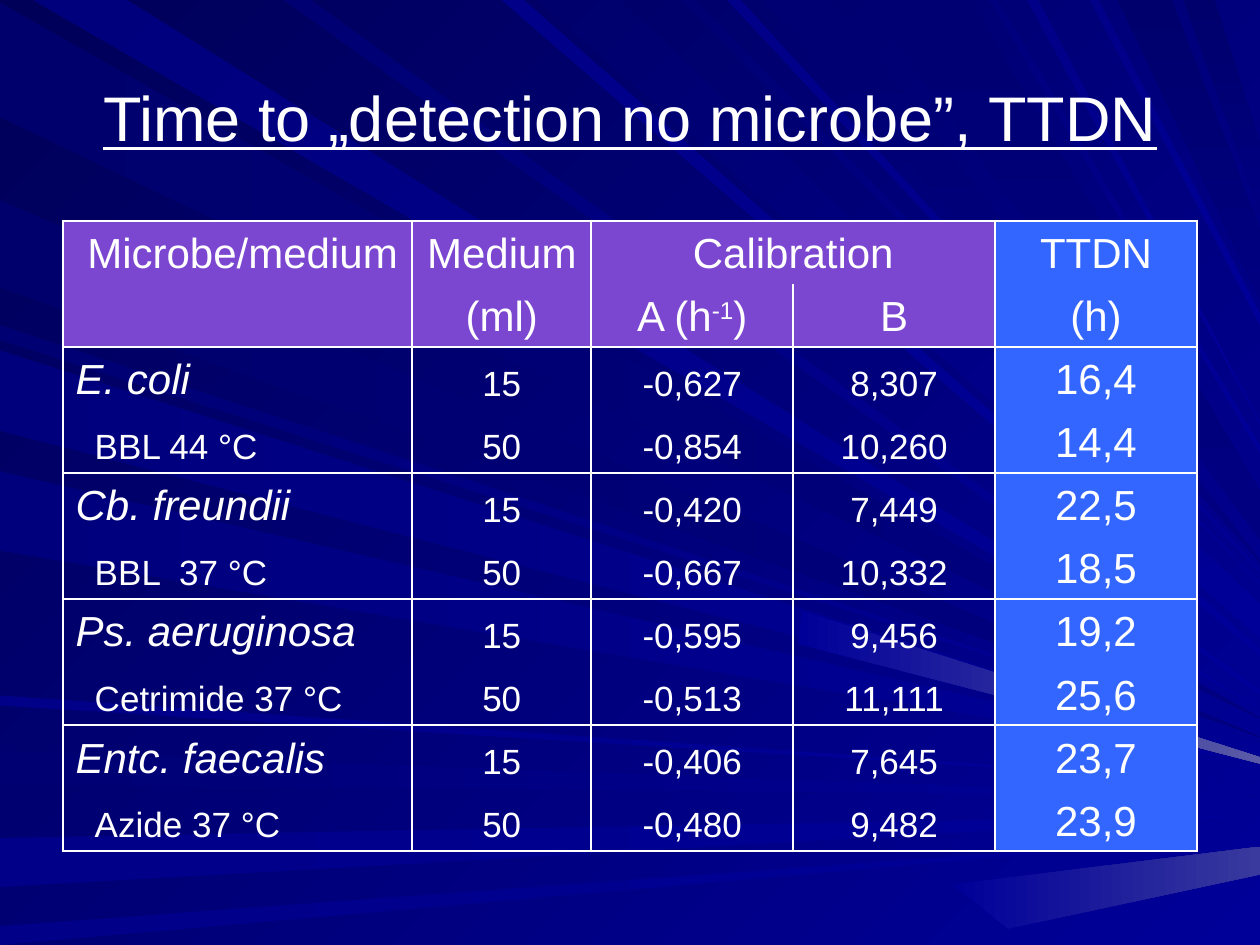
from lxml import etree
from pptx import Presentation
from pptx.dml.color import RGBColor
from pptx.enum.text import MSO_ANCHOR, PP_ALIGN
from pptx.oxml.ns import qn
from pptx.util import Cm, Pt

CENTER, LEFT = PP_ALIGN.CENTER, PP_ALIGN.LEFT
MIDDLE, BOTTOM = MSO_ANCHOR.MIDDLE, MSO_ANCHOR.BOTTOM

WHITE = RGBColor(0xFF, 0xFF, 0xFF)
PURPLE = RGBColor(0x7B, 0x46, 0xD0)
BRIGHT = RGBColor(0x33, 0x66, 0xFF)
MIDNIGHT = RGBColor.from_string("000058")
DEEP = RGBColor.from_string("00006C")
DARK = RGBColor.from_string("000073")
MEDIUM = RGBColor.from_string("00007C")
NAVY = RGBColor.from_string("000080")
ROYAL = RGBColor.from_string("000088")
BLUE = RGBColor.from_string("000099")
HAZE = RGBColor.from_string("39399E")
GLOW = RGBColor.from_string("5A5AA6")

FONT = "Arial"
BORDER = Pt(1.5)
RAY_UNIT = Cm(0.0254)
RIGHT_EDGE = 1000  # slide width in ray units

# start and end on the left edge, height of the tip on the right edge, colours
LEFT_RAYS = [
    (2, 93, 570, DEEP, NAVY),
    (596, 623, 632, DARK, BLUE),
    (665, 704, 647, ROYAL, BLUE),
    (735, 750, 662, ROYAL, BLUE),
    (258, 270, 589, DARK, BLUE),
    (159, 228, 585, DEEP, NAVY),
    (278, 342, 600, MEDIUM, BLUE),
    (374, 437, 606, MEDIUM, BLUE),
    (552, 560, 622, ROYAL, BLUE),
]
# start and end on the top edge, span of the tip on the right edge, colours
TOP_RAYS = [
    (26, 101, 562, 563, MEDIUM, BLUE),
    (398, 416, 515, 521, ROYAL, BLUE),
    (426, 492, 479, 507, DEEP, BLUE),
    (540, 552, 463, 464, DARK, BLUE),
    (606, 661, 445, 446, DARK, NAVY),
    (887, 930, 183, 237, DEEP, NAVY),
    (939, 964, 114, 167, DEEP, NAVY),
    (225, 247, 547, 552, DARK, BLUE),
    (577, 588, 453, 454, ROYAL, BLUE),
    (686, 770, 390, 428, DARK, NAVY),
    (785, 792, 354, 360, MEDIUM, BLUE),
    (815, 824, 335, 336, ROYAL, BLUE),
    (865, 872, 249, 258, ROYAL, BLUE),
]
HAZE_CORNERS = [(756, 702), (1000, 672), (1000, 694), (800, 737)]
GLOW_CORNERS = [(637, 485), (1000, 601), (1000, 606), (633, 511)]

COLUMN_WIDTHS = [7.04, 3.61, 4.07, 4.07, 4.07]
ROW_HEIGHT = 1.26
TTDN_COLUMN = 4
HEADER_ROWS = 2
ROWS = [
    ["Microbe/medium", "Medium", "Calibration", "", "TTDN"],
    ["", "(ml)", "A (h-1)", "B", "(h)"],
    ["E. coli", "15", "-0,627", "8,307", "16,4"],
    ["BBL 44 °C", "50", "-0,854", "10,260", "14,4"],
    ["Cb. freundii", "15", "-0,420", "7,449", "22,5"],
    ["BBL  37 °C", "50", "-0,667", "10,332", "18,5"],
    ["Ps. aeruginosa", "15", "-0,595", "9,456", "19,2"],
    ["Cetrimide 37 °C", "50", "-0,513", "11,111", "25,6"],
    ["Entc. faecalis", "15", "-0,406", "7,645", "23,7"],
    ["Azide 37 °C", "50", "-0,480", "9,482", "23,9"],
]


def paint(fill, first, last, angle):
    """Fill with a gradient; the angle runs clockwise."""
    fill.gradient()
    fill.gradient_angle = (360 - angle) % 360
    for stop, colour in zip(fill.gradient_stops, (first, last)):
        stop.color.rgb = colour


def add_ray(slide, corners, first, last, angle):
    outline = slide.shapes.build_freeform(*corners[0], scale=RAY_UNIT)
    outline.add_line_segments(corners[1:], close=True)
    ray = outline.convert_to_shape()
    ray.shadow.inherit = False
    ray.line.fill.background()
    paint(ray.fill, first, last, angle)


def add_backdrop(slide):
    paint(slide.background.fill, MIDNIGHT, BLUE, 45)
    for start, end, tip, first, last in LEFT_RAYS:
        add_ray(slide, [(0, start), (RIGHT_EDGE, tip), (0, end)], first, last, 0)
    add_ray(slide, HAZE_CORNERS, BLUE, HAZE, 0)
    for start, end, tip_top, tip_bottom, first, last in TOP_RAYS:
        corners = [(start, 0), (end, 0), (RIGHT_EDGE, tip_top), (RIGHT_EDGE, tip_bottom)]
        add_ray(slide, corners, first, last, 90 if last == NAVY else 45)
    add_ray(slide, GLOW_CORNERS, BLUE, GLOW, 0)


def format_run(run, size, italic=False):
    run.font.name = FONT
    run.font.size = Pt(size)
    run.font.italic = italic
    run.font.color.rgb = WHITE


def add_title(slide, text):
    frame = slide.shapes.add_textbox(Cm(1.27), Cm(0.76), Cm(22.86), Cm(3.18)).text_frame
    frame.word_wrap = True
    frame.vertical_anchor = MIDDLE
    heading = frame.paragraphs[0]
    heading.text = text
    heading.alignment = CENTER
    format_run(heading.runs[0], 36)
    heading.runs[0].font.underline = True


def set_borders(cell, edges):
    """Draw the given edges (letters of LRTB) and clear the others."""
    properties = cell._tc.get_or_add_tcPr()
    for edge in "LRTB":
        line = etree.SubElement(properties, qn(f"a:ln{edge}"), w=str(BORDER))
        if edge in edges:
            solid = etree.SubElement(line, qn("a:solidFill"))
            etree.SubElement(solid, qn("a:srgbClr"), val=str(WHITE))
        else:
            etree.SubElement(line, qn("a:noFill"))


def fill_cell(cell, row, column):
    if column == TTDN_COLUMN or row < HEADER_ROWS:
        cell.fill.solid()
        cell.fill.fore_color.rgb = BRIGHT if column == TTDN_COLUMN else PURPLE
    else:
        cell.fill.background()


def write_cell(cell, text, row, column):
    header = row < HEADER_ROWS
    species = column == 0 and row % 2 == 0 and not header
    large = header or species or column == TTDN_COLUMN
    cell.vertical_anchor = BOTTOM
    if column == 0 and not species:
        cell.margin_left = Cm(0.49 if header else 0.64)
    entry = cell.text_frame.paragraphs[0]
    entry.alignment = CENTER if column else LEFT
    base, exponent, rest = text.partition("-1") if header else (text, "", "")
    for part in filter(None, (base, exponent, rest)):
        run = entry.add_run()
        run.text = part
        format_run(run, 24 if large else 20, species)
        if part == exponent:
            run._r.get_or_add_rPr().set("baseline", "30000")


def add_results(slide):
    table = slide.shapes.add_table(
        len(ROWS), len(COLUMN_WIDTHS), Cm(1.27), Cm(4.45),
        Cm(sum(COLUMN_WIDTHS)), Cm(ROW_HEIGHT * len(ROWS))).table
    table.first_row = table.horz_banding = False
    for column, width in zip(table.columns, COLUMN_WIDTHS):
        column.width = Cm(width)
    for row, texts in enumerate(ROWS):
        table.rows[row].height = Cm(ROW_HEIGHT)
        for column, text in enumerate(texts):
            cell = table.cell(row, column)
            set_borders(cell, "LRT" if row % 2 == 0 else "LRB")
            fill_cell(cell, row, column)
            write_cell(cell, text, row, column)
    table.cell(0, 2).merge(table.cell(0, 3))


def main():
    deck = Presentation()
    deck.slide_width, deck.slide_height = Cm(25.4), Cm(19.05)
    slide = deck.slides.add_slide(deck.slide_layouts[6])
    add_backdrop(slide)
    add_title(slide, "Time to „detection no microbe”, TTDN")
    add_results(slide)
    deck.save("out.pptx")


if __name__ == "__main__":
    main()
